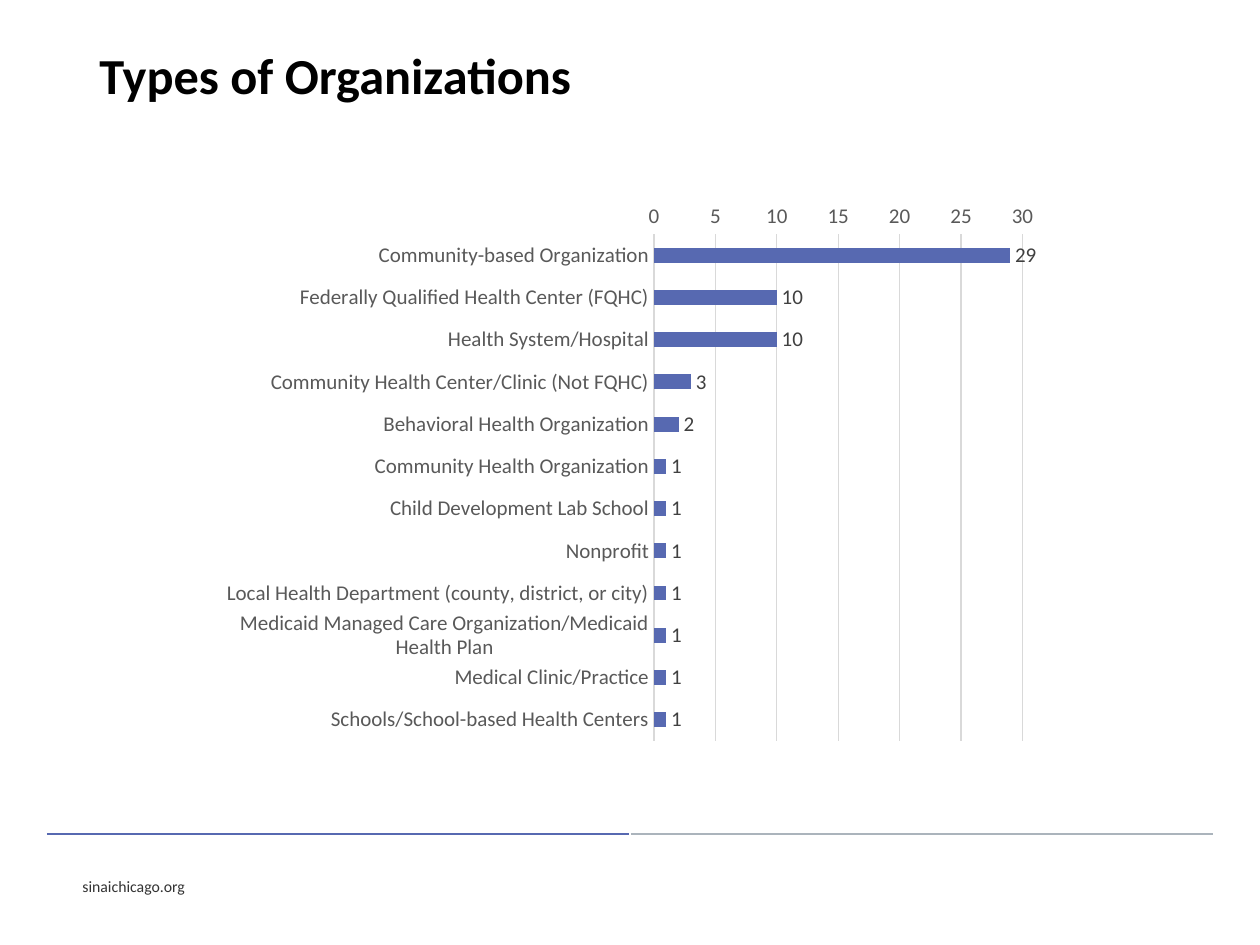
from lxml import etree
from pptx import Presentation
from pptx.chart.data import CategoryChartData as Data
from pptx.dml.color import RGBColor
from pptx.enum.chart import XL_CHART_TYPE as Kind, XL_LABEL_POSITION as Spot
from pptx.enum.chart import XL_TICK_MARK as Tick
from pptx.enum.shapes import MSO_CONNECTOR as Link
from pptx.enum.text import MSO_ANCHOR as Anchor, MSO_AUTO_SIZE as Fit
from pptx.oxml.ns import qn
from pptx.util import Emu, Pt

SCALE = 914400 / 126
FACE = "Calibri"
BLUE, GRID, GREY = "5769B1", "D9D9D9", "595959"
COUNTS = [
    ("Community-based Organization", 29),
    ("Federally Qualified Health Center (FQHC)", 10),
    ("Health System/Hospital", 10),
    ("Community Health Center/Clinic (Not FQHC)", 3),
    ("Behavioral Health Organization", 2),
    ("Community Health Organization", 1),
    ("Child Development Lab School", 1),
    ("Nonprofit", 1),
    ("Local Health Department (county, district, or city)", 1),
    ("Medicaid Managed Care Organization/Medicaid Health Plan", 1),
    ("Medical Clinic/Practice", 1),
    ("Schools/School-based Health Centers", 1),
]


def px(*nums):
    return [Emu(round(n * SCALE)) for n in nums]


def tint(part, code):
    part.rgb = RGBColor.from_string(code)


def style(font, size, code, bold=False):
    font.name, font.size, font.bold = FACE, Pt(size), bold
    tint(font.color, code)


def stroke(line, code, width):
    line.width = Pt(width)
    line.fill.solid()
    tint(line.fill.fore_color, code)


def add_text(slide, box, text, size, code, bold=False, wrap=True):
    frame = slide.shapes.add_textbox(*px(*box)).text_frame
    frame.word_wrap = wrap
    frame.vertical_anchor = Anchor.MIDDLE if wrap else Anchor.TOP
    frame.auto_size = Fit.NONE if wrap else Fit.SHAPE_TO_FIT_TEXT
    par = frame.paragraphs[0]
    par.text = text
    style(par.font, size, code, bold)
    return par


def add_title(slide, box):
    par = add_text(slide, box, "Types of Organizations", 28.8, "000000", True)
    par.line_spacing = 0.9


def add_foot(slide, box):
    left, top, width, _ = box
    half = width // 2
    for start, code in ((left, BLUE), (left + half + 1, "ABB4BC")):
        ends = px(start, top, start + half - 1, top)
        rule = slide.shapes.add_connector(Link.STRAIGHT, *ends)
        stroke(rule.line, code, 1)
        etree.SubElement(rule._element.spPr, qn("a:effectLst"))
    spot = (left + 23, top + 37, 130, 31)
    add_text(slide, spot, "sinaichicago.org", 9, "333333", wrap=False)


def set_axis(axis):
    axis.major_tick_mark = axis.minor_tick_mark = Tick.NONE
    style(axis.tick_labels.font, 12, GREY)


def add_bars(slide, box):
    data = Data()
    data.categories = [name for name, _ in COUNTS]
    data.add_series("Series 1", [count for _, count in COUNTS])
    frame = slide.shapes.add_chart(Kind.BAR_CLUSTERED, *px(*box), data)
    chart = frame.chart
    chart.has_title = chart.has_legend = False
    style(chart.font, 10, "000000")

    names, scale = chart.category_axis, chart.value_axis
    set_axis(names)
    names.reverse_order = True
    stroke(names.format.line, GRID, 0.75)
    set_axis(scale)
    scale.minimum_scale, scale.maximum_scale, scale.major_unit = 0, 30, 5
    scale.format.line.fill.background()
    stroke(scale.major_gridlines.format.line, GRID, 0.75)

    plot = chart.plots[0]
    plot.gap_width = 182
    plot.vary_by_categories = False
    bars = plot.series[0]
    bars.format.fill.solid()
    tint(bars.format.fill.fore_color, BLUE)
    labels = bars.data_labels
    labels.show_value = True
    labels.position = Spot.OUTSIDE_END
    style(labels.font, 12, "404040")


def main():
    deck = Presentation()
    deck.slide_width, deck.slide_height = px(1260, 945)
    slide = deck.slides.add_slide(deck.slide_layouts[6])
    add_foot(slide, (47, 834, 1166, 68))
    add_title(slide, (87, 43, 1086, 70))
    add_bars(slide, (210, 193, 840, 559))
    deck.save("out.pptx")


if __name__ == "__main__":
    main()
